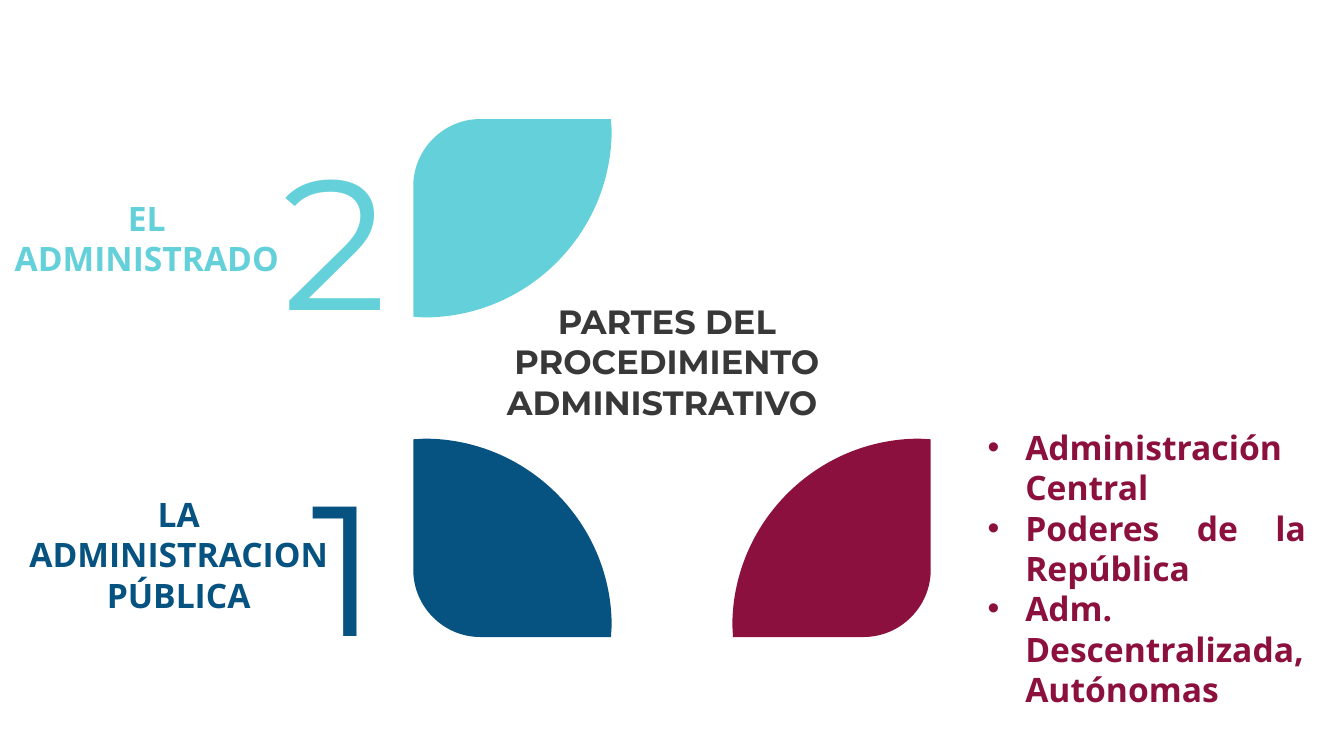
from lxml import etree
from pptx import Presentation
from pptx.dml.color import RGBColor
from pptx.enum import text
from pptx.oxml import ns
from pptx.util import Pt

TEAL = RGBColor(0x64, 0xD1, 0xDA)
BLUE = RGBColor(0x06, 0x52, 0x80)
WINE = RGBColor(0x8C, 0x10, 0x3D)
GREY = RGBColor(0x38, 0x38, 0x38)
BODY, DISPLAY = "Open Sans", "Montserrat"
LEFT, CENTER, JUSTIFY = (text.PP_ALIGN.LEFT, text.PP_ALIGN.CENTER,
                         text.PP_ALIGN.JUSTIFY)

# Content: boxes are left, top, width, height in points
TITLE = "PARTES DEL PROCEDIMIENTO ADMINISTRATIVO "
BODIES = [
    "Administración Central",
    "Poderes de la República",
    "Adm. Descentralizada, Autónomas",
]
PARTIES = [
    ("EL ADMINISTRADO", (9.8, 141.1, 190.1, 39.6),
     "2", (201.6, 90, 155.5, 194.4), TEAL),
    ("LA ADMINISTRACION PÚBLICA", (18.9, 352.8, 217.4, 39.6),
     "1", (222.5, 322.6, 128.2, 194.4), BLUE),
]
# Column (0 left, 1 right), row (0 top, 1 bottom), colour
LEAVES = [(0, 1, BLUE), (0, 0, TEAL), (1, 1, WINE)]

# Leaf measures: outer edges, size, tip, corner radius, arc centre
COLUMNS, ROWS = (295.2, 664.8), (85, 455)
SIZE, TIP, ROUND, INSET = 141.7, 141.2, 48, 8
ARC = 0.55  # handle length of a quarter circle, in radii
BULLET_INDENT = 27

prs = Presentation()
prs.slide_width, prs.slide_height = Pt(960), Pt(540)
s = prs.slides.add_slide(prs.slide_layouts[6])


def add_text(lines, box, color, font=BODY, size=24, bold=True,
             align=CENTER, bullet=False):
    tf = s.shapes.add_textbox(*map(Pt, box)).text_frame
    tf.word_wrap = True
    tf.margin_left = tf.margin_top = tf.margin_right = tf.margin_bottom = 0
    for i, line in enumerate(lines):
        p = tf.paragraphs[0] if i == 0 else tf.add_paragraph()
        p.alignment = align
        r = p.add_run()
        r.text = line
        r.font.name, r.font.size, r.font.bold = font, Pt(size), bold
        r.font.color.rgb = color
        if bullet:
            pPr = p._p.get_or_add_pPr()
            pPr.set("marL", str(Pt(BULLET_INDENT)))
            pPr.set("indent", str(-Pt(BULLET_INDENT)))
            etree.SubElement(pPr, ns.qn("a:buFont")).set("typeface", "Arial")
            etree.SubElement(pPr, ns.qn("a:buChar")).set("char", "•")


def bend(segment, handles):
    """Turn a straight outline segment into a cubic curve."""
    segment.tag = ns.qn("a:cubicBezTo")
    for i, (x, y) in enumerate(handles):
        pt = etree.Element(ns.qn("a:pt"), x=str(x), y=str(y))
        segment.insert(i, pt)


def add_leaf(column, row, color):
    # Points are measured inward from the leaf's rounded outer corner
    def place(x, y):
        return (Pt(SIZE - x if column else x), Pt(SIZE - y if row else y))

    left = Pt(COLUMNS[column] - SIZE * column)
    top = Pt(ROWS[row] - SIZE * row)
    start, *rest = [place(*point) for point in (
        (0, ROUND), (ROUND, 0), (TIP, 0), (SIZE, INSET),
        (INSET, SIZE), (0, TIP))]
    fb = s.shapes.build_freeform(*start, scale=1.0)
    fb.add_line_segments(rest, close=True)
    sp = fb.convert_to_shape(left, top)
    sp.shadow.inherit = False
    sp.fill.solid()
    sp.fill.fore_color.rgb = color
    sp.line.fill.background()

    segments = list(sp._element.iter(ns.qn("a:lnTo")))
    near = ROUND * (1 - ARC)
    far = INSET + (SIZE - INSET) * ARC
    bend(segments[0], [place(0, near), place(near, 0)])
    bend(segments[3], [place(SIZE, far), place(far, SIZE)])


# Bulleted list
add_text(BODIES, (705.4, 304.9, 227.5, 39.6), WINE, align=JUSTIFY, bullet=True)

# Parties with their numbers
for name, name_box, number, number_box, color in PARTIES:
    add_text([name], name_box, color)
    add_text([number], number_box, color, font=DISPLAY, size=132, bold=False,
             align=LEFT)

# Leaves
for leaf in LEAVES:
    add_leaf(*leaf)

# Title
add_text([TITLE], (358.6, 214.9, 235.4, 51.8), GREY, font=DISPLAY)

prs.save("out.pptx")
